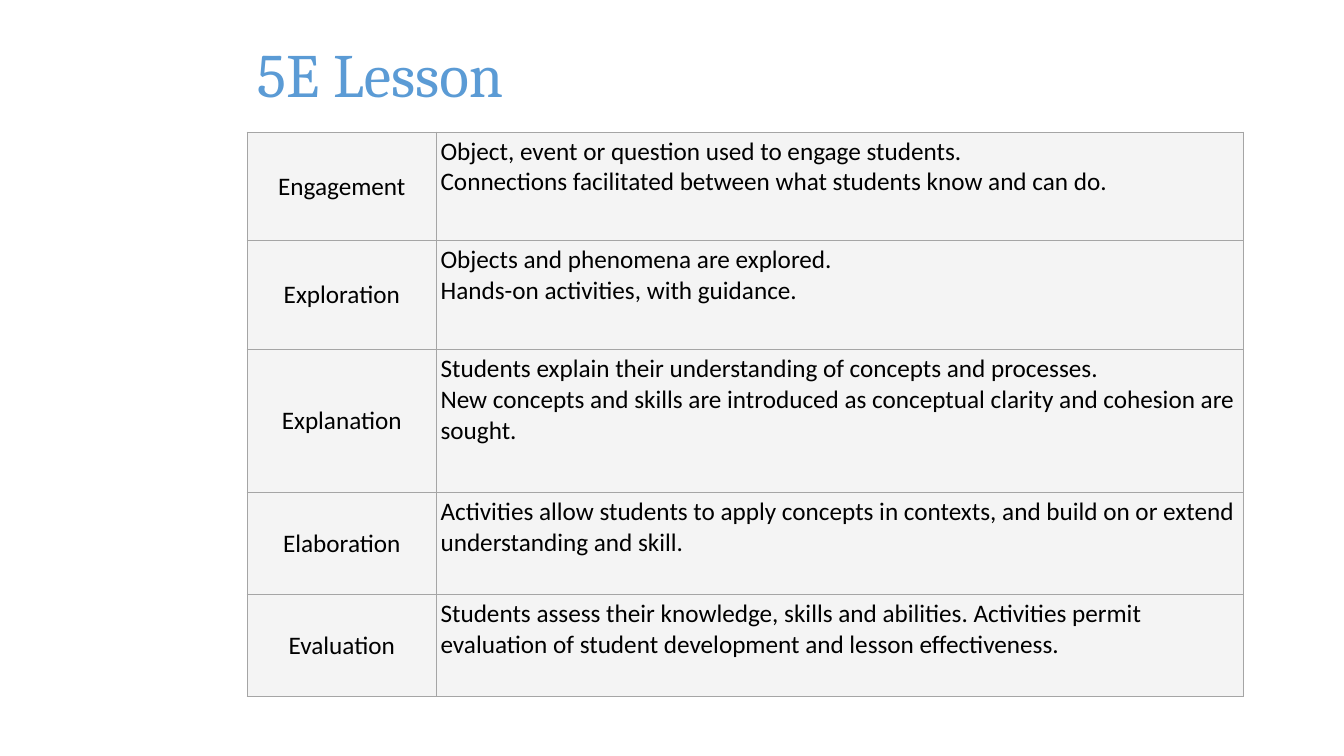
from lxml import etree
from pptx import Presentation
from pptx.dml.color import RGBColor
from pptx.enum.text import MSO_ANCHOR, PP_ALIGN
from pptx.oxml.ns import qn
from pptx.util import Inches, Pt

MIDDLE, TOP = MSO_ANCHOR.MIDDLE, MSO_ANCHOR.TOP
CENTER, LEFT = PP_ALIGN.CENTER, PP_ALIGN.LEFT
BLUE = RGBColor(0x5B, 0x9B, 0xD5)
BLACK = RGBColor(0, 0, 0)
PALE = RGBColor(0xF4, 0xF4, 0xF4)
GREY = RGBColor(0xA5, 0xA5, 0xA5)

COLS = [1.88, 8]
PHASES = [
    ("Engagement", 1.08,
     "Object, event or question used to engage students.\n"
     "Connections facilitated between what students know and can do."),
    ("Exploration", 1.08,
     "Objects and phenomena are explored.\n"
     "Hands-on activities, with guidance."),
    ("Explanation", 1.42,
     "Students explain their understanding of concepts and processes.\n"
     "New concepts and skills are introduced as conceptual clarity "
     "and cohesion are sought."),
    ("Elaboration", 1.01,
     "Activities allow students to apply concepts in contexts, "
     "and build on or extend understanding and skill."),
    ("Evaluation", 1.01,
     "Students assess their knowledge, skills and abilities. Activities "
     "permit evaluation of student development and lesson effectiveness."),
]


def style(frame, face, size, color, align):
    """Format every paragraph and run of a text frame."""
    for para in frame.paragraphs:
        para.alignment = align
        for run in para.runs:
            run.font.name = face
            run.font.size = Pt(size)
            run.font.color.rgb = color


def add_title(slide, text):
    """Add the slide heading."""
    box = slide.shapes.add_textbox(Inches(2.45), Inches(0),
                                   Inches(9.88), Inches(1.45))
    frame = box.text_frame
    frame.word_wrap = True
    frame.vertical_anchor = MIDDLE
    frame.text = text
    style(frame, "Cambria", 44, BLUE, LEFT)


def add_edges(cell):
    """Draw a thin grey line on each side of a cell."""
    props = cell._tc.get_or_add_tcPr()
    for spot, side in enumerate(("a:lnL", "a:lnR", "a:lnT", "a:lnB")):
        line = etree.Element(qn(side), w=str(Pt(0.75)))
        fill = etree.SubElement(line, qn("a:solidFill"))
        etree.SubElement(fill, qn("a:srgbClr"), val=str(GREY))
        props.insert(spot, line)


def fill_cell(cell, text, align, anchor):
    """Set the text and look of one cell."""
    cell.margin_left = cell.margin_right = Inches(0.04)
    cell.margin_top = cell.margin_bottom = Inches(0.04)
    cell.vertical_anchor = anchor
    cell.fill.solid()
    cell.fill.fore_color.rgb = PALE
    cell.text_frame.text = text
    style(cell.text_frame, "Calibri", 18, BLACK, align)
    add_edges(cell)


def add_phases(slide):
    """Add the table of lesson phases."""
    high = sum(phase[1] for phase in PHASES)
    frame = slide.shapes.add_table(len(PHASES), len(COLS), Inches(2.45),
                                   Inches(1.31), Inches(sum(COLS)),
                                   Inches(high))
    table = frame.table
    table.first_row = table.horz_banding = False
    for col, width in zip(table.columns, COLS):
        col.width = Inches(width)
    for row, (name, height, detail) in zip(table.rows, PHASES):
        row.height = Inches(height)
        fill_cell(row.cells[0], name, CENTER, MIDDLE)
        fill_cell(row.cells[1], detail, LEFT, TOP)


def main():
    """Build and save the slide."""
    deck = Presentation()
    deck.slide_width, deck.slide_height = Inches(13.33), Inches(7.5)
    slide = deck.slides.add_slide(deck.slide_layouts[6])
    add_title(slide, "5E Lesson")
    add_phases(slide)
    deck.save("out.pptx")


if __name__ == "__main__":
    main()
